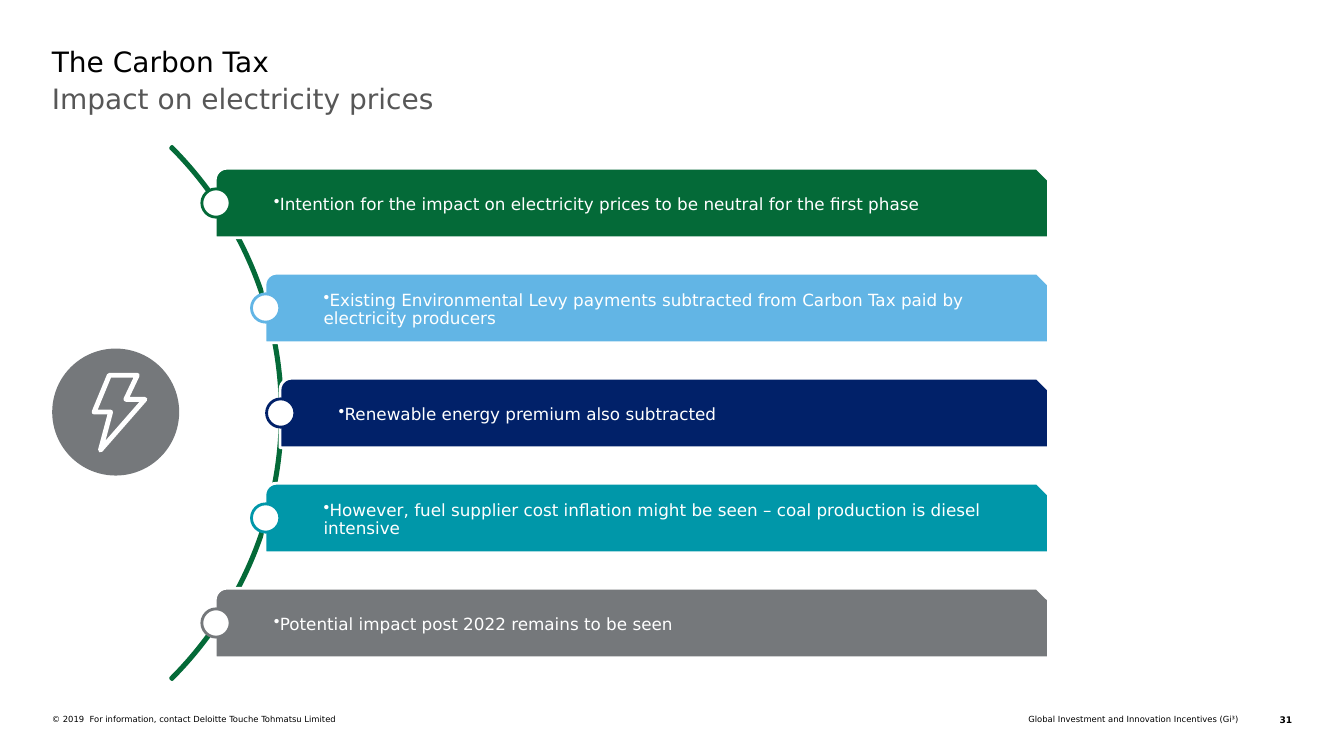
from dataclasses import dataclass
from math import sqrt

from lxml import etree
from pptx import Presentation
from pptx.dml.color import RGBColor
from pptx.enum import shapes as kinds, text as txt
from pptx.oxml import ns
from pptx.util import Pt


@dataclass(frozen=True)
class Theme:
    face: str = "DejaVu Sans"
    black: str = "000000"
    white: str = "FFFFFF"
    soft: str = "575757"
    green: str = "046A38"
    sky: str = "62B5E5"
    navy: str = "012169"
    teal: str = "0097A9"
    grey: str = "75787B"
    head: float = 20
    body: float = 12
    foot: float = 6
    page: float = 6.5
    line: float = 2


T = Theme()
KIND = kinds.MSO_SHAPE
ALIGN = txt.PP_ALIGN

ITEMS = [
    ("Intention for the impact on electricity prices to be neutral for the first phase", T.green),
    ("Existing Environmental Levy payments subtracted from Carbon Tax paid by "
     "electricity producers", T.sky),
    ("Renewable energy premium also subtracted", T.navy),
    ("However, fuel supplier cost inflation might be seen – coal production is diesel "
     "intensive", T.teal),
    ("Potential impact post 2022 remains to be seen", T.grey),
]


def rgb(code):
    return RGBColor.from_string(code)


def pts(*nums):
    return [Pt(n) for n in nums]


def paint(shape, fill=None, line=None, width=T.line):
    shape.shadow.inherit = False
    if fill:
        shape.fill.solid()
        shape.fill.fore_color.rgb = rgb(fill)
    else:
        shape.fill.background()
    if line:
        shape.line.color.rgb = rgb(line)
        shape.line.width = Pt(width)
    else:
        shape.line.fill.background()


def write(shape, words, size, color, align=ALIGN.LEFT, bold=False, mark=None,
          pad=(0, 0, 0, 0), anchor=txt.MSO_ANCHOR.TOP, lead=1.0):
    frame = shape.text_frame
    frame.word_wrap = True
    frame.auto_size = txt.MSO_AUTO_SIZE.NONE
    frame.vertical_anchor = anchor
    (frame.margin_left, frame.margin_top,
     frame.margin_right, frame.margin_bottom) = pts(*pad)
    para = frame.paragraphs[0]
    para.text = words
    para.alignment = align
    para.line_spacing = lead
    para.space_before = Pt(0)
    # Bullet
    props = para._p.get_or_add_pPr()
    props.set("marL", "0")
    props.set("indent", "0")
    if mark:
        etree.SubElement(props, ns.qn("a:buChar")).set("char", mark)
    else:
        etree.SubElement(props, ns.qn("a:buNone"))
    font = para.font
    font.name, font.size, font.bold = T.face, Pt(size), bold
    font.color.rgb = rgb(color)


def header(slide, x, y, w):
    title, sub = slide.placeholders[0], slide.placeholders[1]
    rows = [(title, "The Carbon Tax", T.black, 0, 26.5),
            (sub, "Impact on electricity prices", T.soft, 26.5, 60)]
    for shape, words, color, drop, h in rows:
        shape.left, shape.top, shape.width, shape.height = pts(x, y + drop, w, h)
        write(shape, words, T.head, color)


def footer(slide, x, y, w):
    rows = [
        ("© 2019  For information, contact Deloitte Touche Tohmatsu Limited",
         x, 422, ALIGN.LEFT, T.foot, False),
        ("Global Investment and Innovation Incentives (Gi³)",
         x + w - 423.5, 385, ALIGN.RIGHT, T.foot, False),
        ("31", x + w - 24, 24, ALIGN.RIGHT, T.page, True),
    ]
    for words, left, wide, align, size, bold in rows:
        box = slide.shapes.add_textbox(*pts(left, y, wide, 8))
        write(box, words, size, T.black, align, bold)


def icon(slide, x, y, d):
    disc = slide.shapes.add_shape(KIND.OVAL, *pts(x, y, d, d))
    paint(disc, T.grey)
    # Lightning bolt, in hundredths of the disc
    bolt = [(45, 21), (67, 21), (58, 40), (73, 40), (38, 80), (46, 50), (33, 50)]
    spots = [pts(x + d * u / 100, y + d * v / 100) for u, v in bolt]
    form = slide.shapes.build_freeform(*spots[0])
    form.add_line_segments(spots[1:], close=True)
    paint(form.convert_to_shape(), line=T.white, width=3.5)


def fan(slide, x, y, w, h, items):
    """Bars whose left ends follow an arc that bulges to the right."""
    mid, right = y + h / 2, x + w
    # Arc
    ring, reach = 269.3, 266.5
    hub = right - 549 - reach
    arc = slide.shapes.add_shape(
        KIND.BLOCK_ARC, *pts(hub - 1 - ring, mid - ring, 2 * ring, 2 * ring))
    arc.adjustments[0], arc.adjustments[1], arc.adjustments[2] = 189, 27, 0.003
    paint(arc, line=T.green)
    # Bars and knots
    tall, step, knot = 49.7, 75, 20.2
    for i, (words, color) in enumerate(items):
        rise = (i - (len(items) - 1) / 2) * step
        left = hub + sqrt(reach ** 2 - rise ** 2)
        bar = slide.shapes.add_shape(
            KIND.SNIP_ROUND_RECTANGLE,
            *pts(left, mid + rise - tall / 2, right - left, tall))
        paint(bar, color, T.white)
        write(bar, words, T.body, T.white, mark="•", pad=(39.5, 2.4, 2.4, 2.4),
              anchor=txt.MSO_ANCHOR.MIDDLE, lead=0.9)
        dot = slide.shapes.add_shape(
            KIND.OVAL, *pts(left + 0.5 - knot / 2, mid + rise - knot / 2, knot, knot))
        paint(dot, T.white, color)


def main():
    deck = Presentation()
    deck.slide_width, deck.slide_height = pts(960, 540)
    slide = deck.slides.add_slide(deck.slide_layouts[1])
    header(slide, 37, 31.5, 886)
    fan(slide, 122, 104, 627, 382, ITEMS)
    icon(slide, 37.3, 249, 90.7)
    footer(slide, 37, 510, 886)
    deck.save("out.pptx")


if __name__ == "__main__":
    main()
